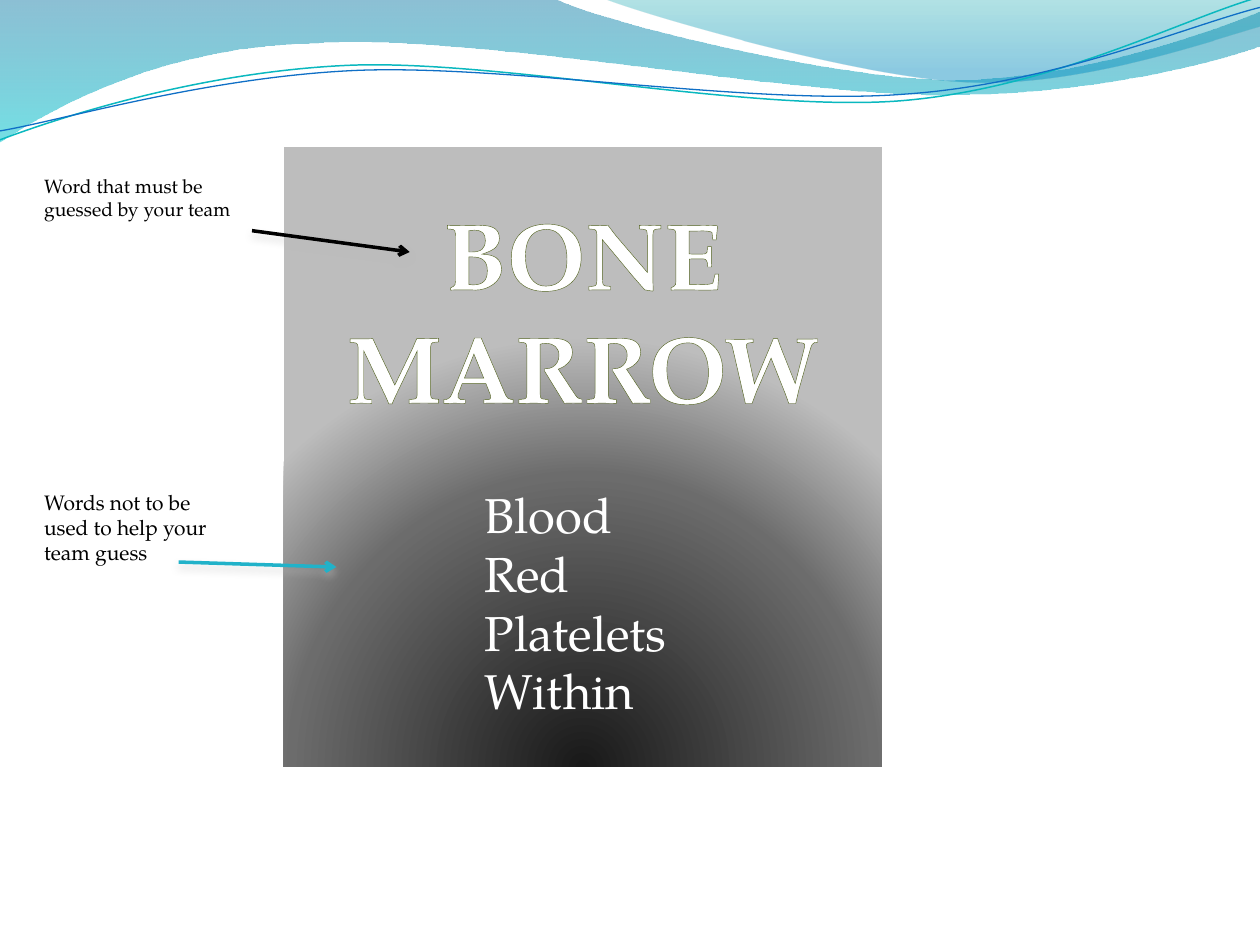
from dataclasses import dataclass

from lxml.etree import SubElement
from pptx import Presentation
from pptx.dml.color import RGBColor
from pptx.enum.shapes import MSO_CONNECTOR, MSO_SHAPE
from pptx.enum.text import MSO_ANCHOR, MSO_AUTO_SIZE, PP_ALIGN
from pptx.oxml.ns import qn
from pptx.util import Cm, Pt

FONT = "TeX Gyre Pagella"
COLORS = {
    "white": "FFFFFF", "black": "000000", "outline": "546422",
    "arrow": "21B2C9", "teal line": "0AB8BF", "blue line": "0F6FC6",
    "deep blue": "0074A1", "cyan": "00C6CF",
    "green": "00A1A9", "sky": "008BBF",
    "charcoal": "191919", "gray": "6C6C6C", "silver": "BDBDBD",
}


@dataclass
class Stop:
    position: int
    color: str
    opacity: int = 100


@dataclass
class Wave:
    """Start point, then segments of one point (line) or three (curve), in cm."""
    start: tuple
    segments: list
    stops: tuple = ()
    line: str = ""
    line_width: float = 0
    rotation: float = 0


@dataclass
class Label:
    text: str
    left: float
    top: float
    width: float
    height: float
    size: int
    color: str


@dataclass
class Arrow:
    start: tuple
    end: tuple
    color: str


WAVES = [
    Wave((0, 0), [
        [(11.18, -0.03)],
        [(12.09, 0.43), (16.87, 1.6), (19.25, 1.6)],
        [(21.67, 1.6), (24.33, 0.66), (25.4, 0.23)],
        [(25.43, 0.91)],
        [(24.97, 1.12), (22.1, 1.93), (18.95, 1.91)],
        [(15.8, 1.91), (9.7, 0.71), (6.53, 0.86)],
        [(3.28, 0.91), (1.17, 2.11), (-0.03, 2.87)],
    ], (Stop(0, "deep blue", 45), Stop(100, "cyan", 55))),
    Wave((12.17, -0.03), [
        [(12.93, 0.28), (17.32, 1.57), (19.53, 1.65)],
        [(21.74, 1.75), (24.41, 0.81), (25.4, 0.53)],
        [(25.4, 0)],
    ], (Stop(0, "green", 30), Stop(80, "sky", 45))),
    Wave((-0.05, 2.22), [
        [(1.19, 1.82), (4.02, 1.04), (7.05, 1.05)],
        [(10.05, 1.07), (15.02, 2.37), (18.08, 2.29)],
        [(21.13, 2.2), (23.87, 0.91), (25.41, 0.55)],
    ], line="teal line", line_width=0.85, rotation=357.3),
    Wave((-0.04, 2.04), [
        [(1.16, 1.9), (4.18, 1.15), (7.2, 1.16)],
        [(10.25, 1.18), (15.13, 2.25), (18.18, 2.16)],
        [(21.21, 2.1), (23.93, 1.06), (25.45, 0.75)],
    ], line="blue line", line_width=0.75, rotation=357.3),
]
CARD = (5.72, 2.97, 12.06, 12.49)
CARD_STOPS = (Stop(0, "charcoal"), Stop(68, "gray"), Stop(100, "silver"))
FORBIDDEN = Label("Blood\nRed\nPlatelets\nWithin", 9.52, 9.64, 4.65, 6.25, 28, "white")
ANSWER = Label("BONE MARROW", 5.72, 3.81, 12.06, 4.98, 54, "white")
NOTES = [
    Label("Word that must be guessed by your team", 0.64, 3.39, 4.45, 1.19, 11, "black"),
    Label("Words not to be used to help your team guess", 0.64, 9.74, 4.45, 1.8, 12, "black"),
]
ARROWS = [
    Arrow((5.08, 4.65), (8.26, 5.08), "black"),
    Arrow((3.6, 11.33), (6.78, 11.43), "arrow"),
]


def rgb(name: str) -> RGBColor:
    return RGBColor.from_string(COLORS[name])


def add_color(parent, name: str, opacity: int = 100) -> None:
    color = SubElement(parent, qn("a:srgbClr"), val=COLORS[name])
    if opacity < 100:
        SubElement(color, qn("a:alpha"), val=str(opacity * 1000))


def fill_gradient(shape, stops, radial: bool = False) -> None:
    shape.fill.gradient()
    gradient = shape._element.spPr.find(qn("a:gradFill"))
    for child in list(gradient):
        gradient.remove(child)
    stop_list = SubElement(gradient, qn("a:gsLst"))
    for stop in stops:
        mark = SubElement(stop_list, qn("a:gs"), pos=str(stop.position * 1000))
        add_color(mark, stop.color, stop.opacity)
    if radial:
        shade = SubElement(gradient, qn("a:path"), path="circle")
        SubElement(shade, qn("a:fillToRect"), l="50000", t="130000", r="50000", b="-30000")
    else:
        SubElement(gradient, qn("a:lin"), ang="5400000", scaled="0")


def add_shadow(shape) -> None:
    effects = SubElement(shape._element.spPr, qn("a:effectLst"))
    shadow = SubElement(effects, qn("a:outerShdw"), blurRad=str(Pt(4.5)), dist=str(Pt(3)),
                        dir="5400000", rotWithShape="0")
    add_color(shadow, "silver", 48)


def bend(shape, segments) -> None:
    """Turn each run of three straight steps that stands for a curve into a cubic Bézier."""
    steps = iter(list(shape._element.iter(qn("a:lnTo"))))
    for segment in segments:
        parts = [next(steps) for _ in segment]
        if len(parts) == 3:
            curve = SubElement(parts[0].getparent(), qn("a:cubicBezTo"))
            parts[0].addprevious(curve)
            for part in parts:
                curve.append(part[0])
                part.getparent().remove(part)


def draw_wave(page, wave: Wave) -> None:
    points = [(Cm(x), Cm(y)) for segment in wave.segments for x, y in segment]
    builder = page.shapes.build_freeform(*map(Cm, wave.start))
    builder.add_line_segments(points, close=bool(wave.stops))
    shape = builder.convert_to_shape()
    bend(shape, wave.segments)
    shape.rotation = wave.rotation
    shape.shadow.inherit = False
    if wave.stops:
        fill_gradient(shape, wave.stops)
        shape.line.fill.background()
    else:
        shape.fill.background()
        shape.line.color.rgb = rgb(wave.line)
        shape.line.width = Pt(wave.line_width)


def draw_card(page) -> None:
    card = page.shapes.add_shape(MSO_SHAPE.RECTANGLE, *map(Cm, CARD))
    card.shadow.inherit = False
    fill_gradient(card, CARD_STOPS, radial=True)
    card.line.fill.background()


def write_label(box, label: Label, align=PP_ALIGN.LEFT, bold: bool = False) -> None:
    box.left, box.top = Cm(label.left), Cm(label.top)
    box.width, box.height = Cm(label.width), Cm(label.height)
    frame = box.text_frame
    frame.text = label.text
    frame.word_wrap = True
    frame.auto_size = MSO_AUTO_SIZE.SHAPE_TO_FIT_TEXT
    frame.vertical_anchor = MSO_ANCHOR.TOP
    for para in frame.paragraphs:
        para.alignment = align
        para.font.name = FONT
        para.font.size = Pt(label.size)
        para.font.bold = bold
        para.font.color.rgb = rgb(label.color)


def draw_label(page, label: Label) -> None:
    write_label(page.shapes.add_textbox(0, 0, 0, 0), label)


def draw_answer(page) -> None:
    """Put the title in front of the card, with outlined letters."""
    title = page.shapes.title
    page.shapes._spTree.append(title._element)
    write_label(title, ANSWER, PP_ALIGN.CENTER, bold=True)
    span = title.text_frame.paragraphs[0].runs[0]
    outline = SubElement(span._r.get_or_add_rPr(), qn("a:ln"), w=str(Pt(0.83)))
    add_color(SubElement(outline, qn("a:solidFill")), "outline")


def draw_arrow(page, arrow: Arrow) -> None:
    connector = page.shapes.add_connector(
        MSO_CONNECTOR.STRAIGHT, *map(Cm, arrow.start + arrow.end))
    connector.line.color.rgb = rgb(arrow.color)
    connector.line.width = Pt(2)
    SubElement(connector.line._get_or_add_ln(), qn("a:tailEnd"), type="arrow")
    add_shadow(connector)


def main() -> None:
    deck = Presentation()
    deck.slide_width, deck.slide_height = Cm(25.4), Cm(19.05)
    page = deck.slides.add_slide(deck.slide_layouts[5])
    for wave in WAVES:
        draw_wave(page, wave)
    draw_card(page)
    draw_label(page, FORBIDDEN)
    draw_answer(page)
    for note in NOTES:
        draw_label(page, note)
    for arrow in ARROWS:
        draw_arrow(page, arrow)
    deck.save("out.pptx")


if __name__ == "__main__":
    main()
